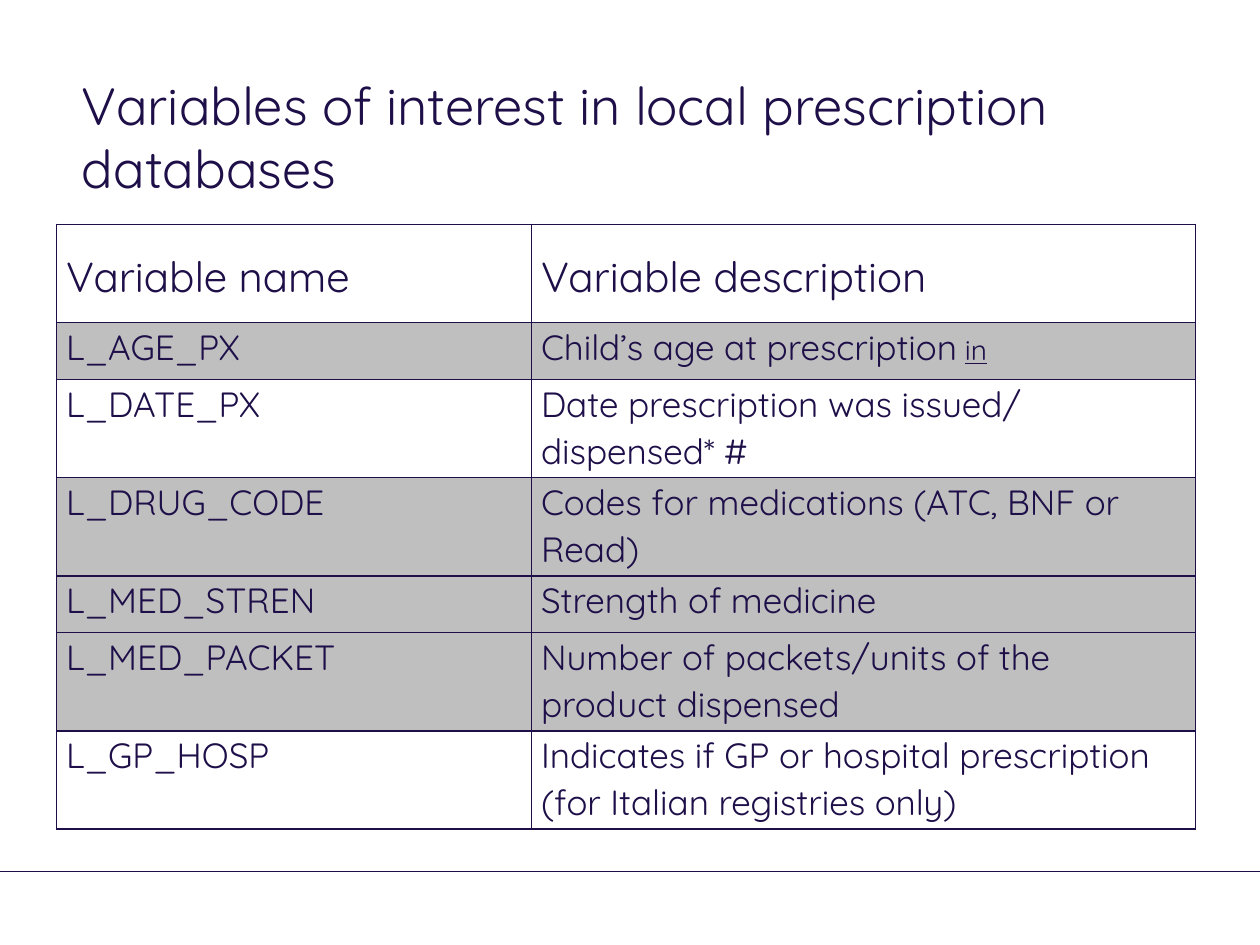
from lxml import etree
from pptx import Presentation
from pptx.dml.color import RGBColor
from pptx.enum import shapes, text
from pptx.oxml import ns
from pptx.util import Pt

NAVY = RGBColor(0x1E, 0x0F, 0x49)
RULE = RGBColor(0x1D, 0x0D, 0x49)
GREY = RGBColor(0xBF, 0xBF, 0xBF)
FACE = "Quicksand"

HEAD = ("Variable name", "Variable description")
# name, description, shaded
ROWS = [
    ("L_AGE_PX", "Child’s age at prescription", True),
    ("L_DATE_PX", "Date prescription was issued/ dispensed* #", False),
    ("L_DRUG_CODE", "Codes for medications (ATC, BNF or Read)", True),
    ("L_MED_STREN", "Strength of medicine", True),
    ("L_MED_PACKET", "Number of packets/units of the product dispensed", True),
    ("L_GP_HOSP", "Indicates if GP or hospital prescription "
                  "(for Italian registries only)", False),
]
SHORT = {"L_AGE_PX", "L_MED_STREN"}


def style(font, size):
    font.name = FACE
    font.size = Pt(size)
    font.color.rgb = NAVY


def add_title(slide, left, top, width, height):
    title = slide.shapes.title
    title.left, title.top = Pt(left), Pt(top)
    title.width, title.height = Pt(width), Pt(height)
    frame = title.text_frame
    frame.text = "Variables of interest in local prescription databases"
    frame.word_wrap = True
    frame.auto_size = text.MSO_AUTO_SIZE.NONE
    frame.vertical_anchor = text.MSO_ANCHOR.TOP
    para = frame.paragraphs[0]
    para.alignment = text.PP_ALIGN.LEFT
    style(para.runs[0].font, 30)


def add_rule(slide, left, top, width):
    line = slide.shapes.add_connector(
        shapes.MSO_CONNECTOR.STRAIGHT, Pt(left), Pt(top), Pt(left + width), Pt(top))
    line.line.color.rgb = RULE
    line.line.width = Pt(0.25)
    etree.SubElement(line._element.spPr, ns.qn("a:effectLst"))


def add_edges(cell):
    """Draw a thin line on all four sides of the cell."""
    props = cell._tc.get_or_add_tcPr()
    for spot, side in enumerate(("lnL", "lnR", "lnT", "lnB")):
        edge = etree.Element(ns.qn("a:" + side), w=str(Pt(1)))
        fill = etree.SubElement(edge, ns.qn("a:solidFill"))
        etree.SubElement(fill, ns.qn("a:srgbClr"), val=str(NAVY))
        props.insert(spot, edge)


def fill_cell(cell, words, size, space, shaded):
    cell.margin_left = cell.margin_right = Pt(5.4)
    cell.margin_top = cell.margin_bottom = 0
    cell.vertical_anchor = text.MSO_ANCHOR.TOP
    if shaded:
        cell.fill.solid()
        cell.fill.fore_color.rgb = GREY
    else:
        cell.fill.background()
    add_edges(cell)
    para = cell.text_frame.paragraphs[0]
    para.text = words
    para.line_spacing = space
    style(para.runs[0].font, size)


def add_unit(cell):
    """Add the small underlined word that ends the age description."""
    para = cell.text_frame.paragraphs[0]
    for words, under in ((" ", False), ("in", True)):
        run = para.add_run()
        run.text = words
        style(run.font, 16)
        run.font.underline = under


def add_grid(slide, left, top, width, height):
    low = 32.4
    tall = (height - low * len(SHORT)) / (len(ROWS) + 1 - len(SHORT))
    frame = slide.shapes.add_table(
        len(ROWS) + 1, 2, Pt(left), Pt(top), Pt(width), Pt(height))
    grid = frame.table
    grid.first_row = grid.horz_banding = False
    first = 271.4
    grid.columns[0].width, grid.columns[1].width = Pt(first), Pt(width - first)
    grid.rows[0].height = Pt(tall)
    for col, words in enumerate(HEAD):
        fill_cell(grid.cell(0, col), words, 24, 1.5, False)
    for row, (name, note, shaded) in enumerate(ROWS, 1):
        grid.rows[row].height = Pt(low if name in SHORT else tall)
        for col, words in enumerate((name, note)):
            fill_cell(grid.cell(row, col), words, 20, 1.07, shaded)
    add_unit(grid.cell(1, 1))


def main():
    deck = Presentation()
    deck.slide_width, deck.slide_height = Pt(720), Pt(540)
    slide = deck.slides.add_slide(deck.slide_layouts[5])
    add_rule(slide, 0, 498, 720)
    add_title(slide, 39.6, 38.2, 594.7, 61.9)
    add_grid(slide, 32.4, 128.2, 650.9, 345.6)
    deck.save("out.pptx")


if __name__ == "__main__":
    main()
